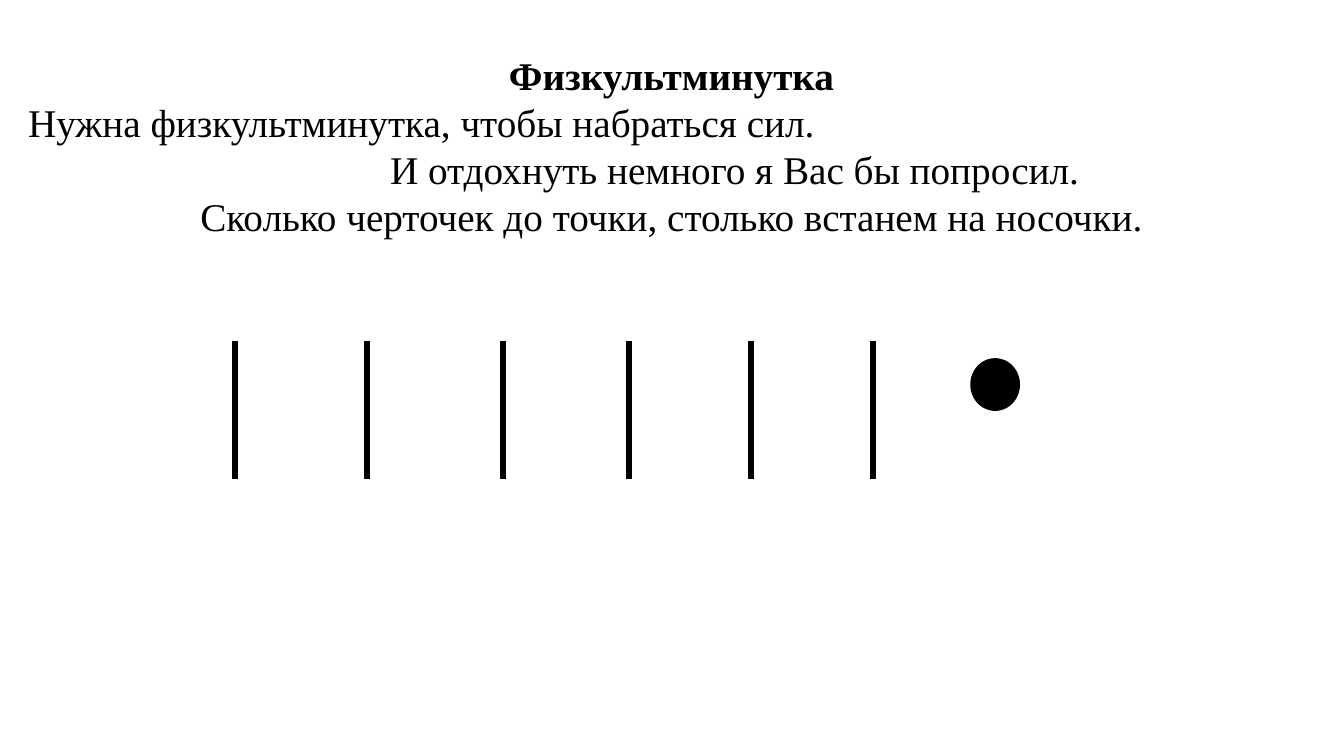
from dataclasses import dataclass

from lxml.etree import SubElement
from pptx import Presentation
from pptx.dml.color import RGBColor
from pptx.enum.shapes import MSO_CONNECTOR, MSO_SHAPE
from pptx.enum.text import MSO_ANCHOR, MSO_AUTO_SIZE, PP_ALIGN
from pptx.oxml.ns import qn
from pptx.util import Inches, Pt


@dataclass(frozen=True)
class Theme:
    """Colours, font and sizes of the slide."""

    ink: RGBColor = RGBColor(0x00, 0x00, 0x00)
    paper: RGBColor = RGBColor(0xFF, 0xFF, 0xFF)
    font: str = "Times New Roman"
    text_size: Pt = Pt(28)
    line_spacing: Pt = Pt(33.5)
    dash_width: Pt = Pt(4.5)
    dot_outline: Pt = Pt(1)


THEME = Theme()
HEADING = "Физкультминутка"
VERSE = (
    ("Нужна физкультминутка, чтобы набраться сил.", PP_ALIGN.LEFT, 0.02),
    ("И отдохнуть немного я Вас бы попросил.", PP_ALIGN.CENTER, 1.25),
    ("Сколько черточек до точки, столько встанем на носочки.", PP_ALIGN.CENTER, 0),
)
TEXT_LEFT, TEXT_WIDTH = Inches(0.16), Inches(13)
DASH_POSITIONS = (2.33, 3.64, 4.99, 6.24, 7.45, 8.66)
DASH_TOP, DASH_BOTTOM = Inches(3.38), Inches(4.75)


def prepare_frame(frame):
    """Make a text frame wrap and start at its top edge."""
    frame.word_wrap = True
    frame.auto_size = MSO_AUTO_SIZE.NONE
    frame.vertical_anchor = MSO_ANCHOR.TOP


def write_line(paragraph, words, alignment, indent=0, bold=False):
    """Fill and format one line of text."""
    paragraph.text = words
    paragraph.alignment = alignment
    paragraph.line_spacing = THEME.line_spacing
    paragraph.space_before = Pt(0)
    paragraph.font.name = THEME.font
    paragraph.font.size = THEME.text_size
    paragraph.font.bold = bold
    paragraph.font.color.rgb = THEME.ink
    paragraph._p.get_or_add_pPr().set("marL", str(Inches(indent)))


def add_heading(slide):
    """Place the heading in the title placeholder."""
    heading = slide.shapes.title
    heading.left, heading.top = TEXT_LEFT, Inches(0.46)
    heading.width, heading.height = TEXT_WIDTH, Inches(0.57)
    prepare_frame(heading.text_frame)
    write_line(heading.text_frame.paragraphs[0], HEADING, PP_ALIGN.CENTER, bold=True)


def add_verse(slide):
    """Add the three lines of the rhyme."""
    verse = slide.shapes.add_textbox(TEXT_LEFT, Inches(0.93), TEXT_WIDTH, Inches(1.52))
    frame = verse.text_frame
    prepare_frame(frame)
    for number, (words, alignment, indent) in enumerate(VERSE):
        paragraph = frame.add_paragraph() if number else frame.paragraphs[0]
        write_line(paragraph, words, alignment, indent)


def add_dash(slide, position):
    """Draw one upright dash."""
    x = Inches(position)
    dash = slide.shapes.add_connector(MSO_CONNECTOR.STRAIGHT, x, DASH_TOP, x, DASH_BOTTOM)
    dash.line.color.rgb = THEME.ink
    dash.line.width = THEME.dash_width
    SubElement(dash._element.spPr, qn("a:effectLst"))


def add_dot(slide):
    """Draw the dot after the dashes."""
    dot = slide.shapes.add_shape(
        MSO_SHAPE.FLOWCHART_CONNECTOR, Inches(9.63), Inches(3.56), Inches(0.48), Inches(0.51)
    )
    dot.shadow.inherit = False
    dot.fill.solid()
    dot.fill.fore_color.rgb = THEME.ink
    dot.line.color.rgb = THEME.ink
    dot.line.width = THEME.dot_outline


def main():
    """Build and save the slide."""
    presentation = Presentation()
    presentation.slide_width, presentation.slide_height = Inches(13.33), Inches(7.5)
    slide = presentation.slides.add_slide(presentation.slide_layouts.get_by_name("Title Only"))
    slide.background.fill.solid()
    slide.background.fill.fore_color.rgb = THEME.paper
    add_heading(slide)
    add_verse(slide)
    for position in DASH_POSITIONS:
        add_dash(slide, position)
    add_dot(slide)
    presentation.save("out.pptx")


if __name__ == "__main__":
    main()
